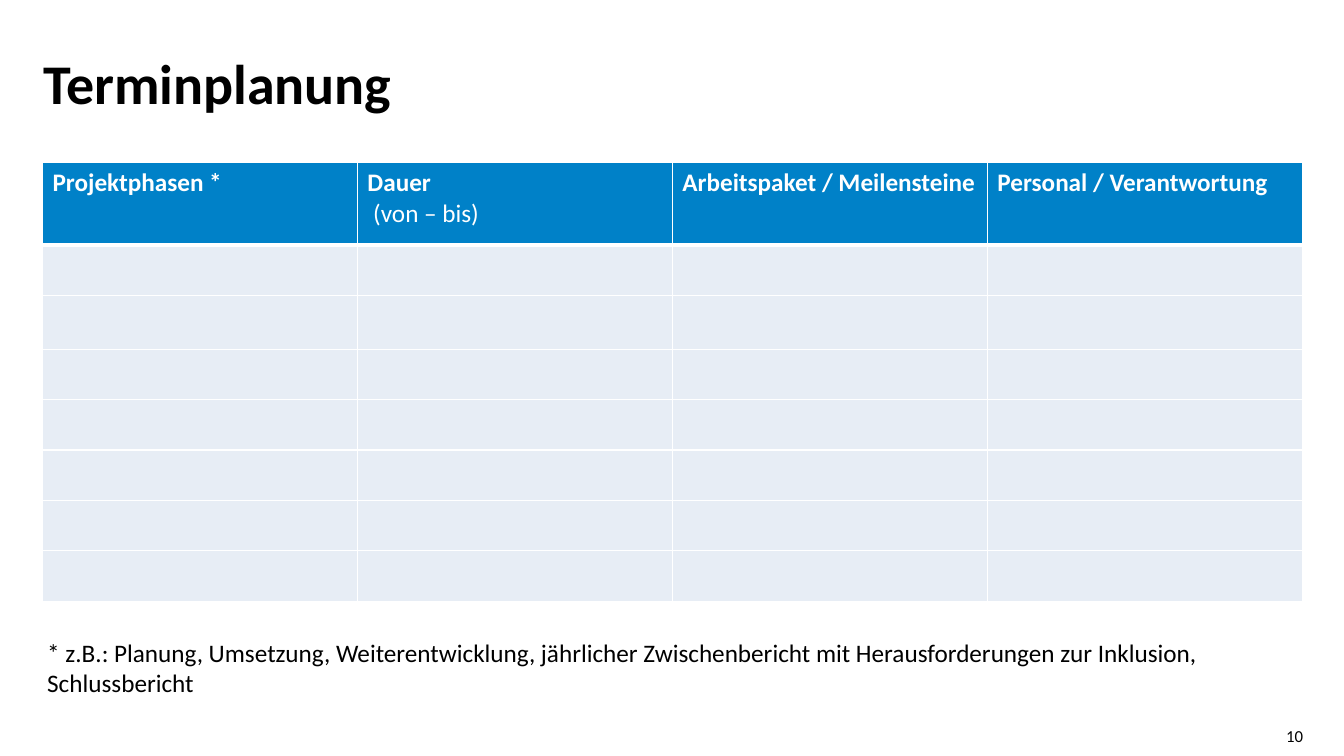
import lxml.etree
import pptx
import pptx.dml.color
import pptx.enum.text
import pptx.oxml.ns
import pptx.util
from pptx.util import Cm

FONT = "Calibri"
BLACK, WHITE = "000000", "FFFFFF"
HEADER_BLUE, ROW_GREY = "0081C8", "E7EDF5"
ROW_HEIGHTS = [2.08, 1.27, 1.35] + [1.27] * 5

# Each header holds paragraphs, each paragraph holds (text, bold) runs
HEADERS = [
    [[("Projektphasen *", True)]],
    [[("Dauer", True)], [("\N{NO-BREAK SPACE}", True), ("(von – bis)", False)]],
    [[("Arbeitspaket / Meilensteine", True)]],
    [[("Personal / Verantwortung", True)]],
]


def color(hex_string):
    return pptx.dml.color.RGBColor.from_string(hex_string)


def add_run(paragraph, text, size, hex_string, bold=False):
    run = paragraph.add_run()
    run.text = text
    run.font.name = FONT
    run.font.size = pptx.util.Pt(size)
    run.font.bold = bold
    run.font.color.rgb = color(hex_string)


def clear_margins(text_frame):
    text_frame.margin_left = text_frame.margin_right = 0
    text_frame.margin_top = text_frame.margin_bottom = 0


def set_border(cell, side, width):
    properties = cell._tc.get_or_add_tcPr()
    line = lxml.etree.SubElement(
        properties, pptx.oxml.ns.qn("a:ln" + side), w=str(pptx.util.Pt(width)))
    fill = lxml.etree.SubElement(line, pptx.oxml.ns.qn("a:solidFill"))
    lxml.etree.SubElement(fill, pptx.oxml.ns.qn("a:srgbClr"), val=WHITE)


def add_title(slide, left, top, width, height):
    title = slide.shapes.title
    title.left, title.top, title.width, title.height = left, top, width, height
    text_frame = title.text_frame
    clear_margins(text_frame)
    text_frame.word_wrap = True
    text_frame.vertical_anchor = pptx.enum.text.MSO_ANCHOR.TOP
    paragraph = text_frame.paragraphs[0]
    paragraph.alignment = pptx.enum.text.PP_ALIGN.LEFT
    paragraph.line_spacing = 0.9
    add_run(paragraph, "Terminplanung", 40, BLACK, bold=True)


def add_schedule(slide, left, top, width):
    height = Cm(sum(ROW_HEIGHTS))
    table = slide.shapes.add_table(
        len(ROW_HEIGHTS), len(HEADERS), left, top, width, height).table
    for row, row_height in zip(table.rows, ROW_HEIGHTS):
        row.height = Cm(row_height)
    for column in table.columns:
        column.width = width // len(HEADERS)

    # White grid with a thicker rule under the header
    for row_index, row in enumerate(table.rows):
        for cell in row.cells:
            set_border(cell, "L", 1)
            set_border(cell, "R", 1)
            set_border(cell, "T", 3 if row_index == 1 else 1)
            set_border(cell, "B", 3 if row_index == 0 else 1)
            cell.fill.solid()
            cell.fill.fore_color.rgb = color(ROW_GREY if row_index else HEADER_BLUE)

    # Header texts
    for cell, paragraphs in zip(table.rows[0].cells, HEADERS):
        for index, runs in enumerate(paragraphs):
            text_frame = cell.text_frame
            paragraph = text_frame.add_paragraph() if index else text_frame.paragraphs[0]
            for text, bold in runs:
                add_run(paragraph, text, 18, WHITE, bold)


def add_footnote(slide, left, top, width, height):
    text_frame = slide.shapes.add_textbox(left, top, width, height).text_frame
    text_frame.word_wrap = True
    add_run(text_frame.paragraphs[0],
            "* z.B.: Planung, Umsetzung, Weiterentwicklung, jährlicher Zwischenbericht "
            "mit Herausforderungen zur Inklusion, Schlussbericht", 18, BLACK)


def add_page_number(slide, left, top, width, height):
    text_frame = slide.shapes.add_textbox(left, top, width, height).text_frame
    clear_margins(text_frame)
    text_frame.word_wrap = True
    text_frame.vertical_anchor = pptx.enum.text.MSO_ANCHOR.MIDDLE
    paragraph = text_frame.paragraphs[0]
    paragraph.alignment = pptx.enum.text.PP_ALIGN.RIGHT
    add_run(paragraph, "10", 12, BLACK)


def main():
    presentation = pptx.Presentation()
    presentation.slide_width, presentation.slide_height = Cm(33.87), Cm(19.05)
    slide = presentation.slides.add_slide(presentation.slide_layouts[5])
    add_title(slide, Cm(1.09), Cm(1.42), Cm(25.4), Cm(2.16))
    add_schedule(slide, Cm(1.07), Cm(4.1), Cm(31.75))
    add_footnote(slide, Cm(0.94), Cm(15.93), Cm(31.75), Cm(1.8))
    add_page_number(slide, Cm(31.65), Cm(18.29), Cm(1.19), Cm(0.51))
    presentation.save("out.pptx")


if __name__ == "__main__":
    main()
